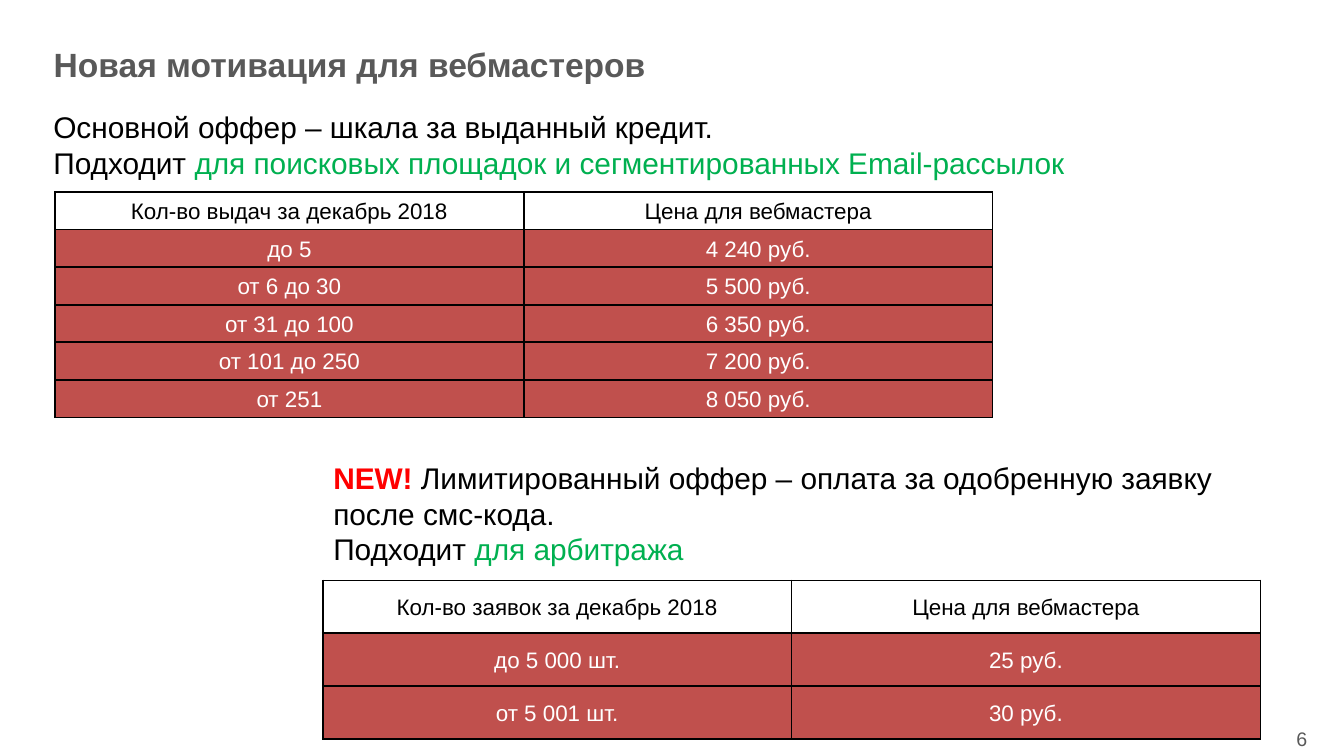
from lxml import etree
from pptx import Presentation
from pptx.dml.color import RGBColor
from pptx.enum.text import MSO_ANCHOR, PP_ALIGN
from pptx.oxml.ns import qn
from pptx.util import Cm, Pt

MIDDLE = MSO_ANCHOR.MIDDLE
CENTER = PP_ALIGN.CENTER
LEFT = PP_ALIGN.LEFT
TITLE_ONLY = 5
FONT = "Arial"
BLACK = "000000"
WHITE = "FFFFFF"
GRAY = "595959"
GREEN = "00B050"
RED = "FF0000"
BRICK = "C0504D"
COLUMN_WIDTH = 8.86

ISSUED_LOANS = [
    ("Кол-во выдач за декабрь 2018", "Цена для вебмастера"),
    ("до 5", "4 240 руб."),
    ("от 6 до 30", "5 500 руб."),
    ("от 31 до 100", "6 350 руб."),
    ("от 101 до 250", "7 200 руб."),
    ("от 251", "8 050 руб."),
]
APPROVED_REQUESTS = [
    ("Кол-во заявок за декабрь 2018", "Цена для вебмастера"),
    ("до 5 000 шт.", "25 руб."),
    ("от 5 001 шт.", "30 руб."),
]
MAIN_OFFER = [
    [("Основной оффер – шкала за выданный кредит.", BLACK, False)],
    [("Подходит ", BLACK, False),
     ("для поисковых площадок и сегментированных Email-рассылок", GREEN, False)],
]
LIMITED_OFFER = [
    [("NEW! ", RED, True),
     ("Лимитированный оффер – оплата за одобренную заявку после смс-кода.",
      BLACK, False)],
    [("Подходит ", BLACK, False), ("для арбитража", GREEN, False)],
]


def color(value):
    return RGBColor.from_string(value)


def format_font(font, size, value, bold=False):
    font.name = FONT
    font.size = Pt(size)
    font.bold = bold
    font.color.rgb = color(value)


def place(shape, left, top, width, height):
    shape.left, shape.top = Cm(left), Cm(top)
    shape.width, shape.height = Cm(width), Cm(height)


def set_title(slide, text):
    title = slide.shapes.title
    place(title, 0.76, 0.71, 21.29, 0.99)
    title.text_frame.text = text
    title.text_frame.vertical_anchor = MIDDLE
    paragraph = title.text_frame.paragraphs[0]
    paragraph.alignment = LEFT
    format_font(paragraph.runs[0].font, 18, GRAY, True)


def add_text(slide, box, lines, size, alignment=LEFT):
    shape = slide.shapes.add_textbox(*map(Cm, box))
    frame = shape.text_frame
    frame.word_wrap = True
    for index, line in enumerate(lines):
        paragraph = frame.add_paragraph() if index else frame.paragraphs[0]
        paragraph.alignment = alignment
        for text, value, bold in line:
            run = paragraph.add_run()
            run.text = text
            format_font(run.font, size, value, bold)


def add_borders(cell):
    properties = cell._tc.get_or_add_tcPr()
    for index, side in enumerate(("a:lnL", "a:lnR", "a:lnT", "a:lnB")):
        line = etree.Element(qn(side), w=str(Pt(1)))
        fill = etree.SubElement(line, qn("a:solidFill"))
        etree.SubElement(fill, qn("a:srgbClr"), val=BLACK)
        properties.insert(index, line)


def format_cell(cell, text, text_color, fill_color):
    cell.margin_left = cell.margin_right = cell.margin_top = Cm(0.03)
    cell.margin_bottom = 0
    cell.vertical_anchor = MIDDLE
    cell.fill.solid()
    cell.fill.fore_color.rgb = color(fill_color)
    cell.text_frame.text = text
    paragraph = cell.text_frame.paragraphs[0]
    paragraph.alignment = CENTER
    format_font(paragraph.runs[0].font, 12, text_color)
    add_borders(cell)


def add_price_table(slide, left, top, row_height, rows):
    columns = len(rows[0])
    table = slide.shapes.add_table(
        len(rows), columns, Cm(left), Cm(top),
        Cm(COLUMN_WIDTH * columns), Cm(row_height * len(rows))).table
    for column in table.columns:
        column.width = Cm(COLUMN_WIDTH)
    for row_index, values in enumerate(rows):
        table.rows[row_index].height = Cm(row_height)
        text_color, fill_color = (WHITE, BRICK) if row_index else (BLACK, WHITE)
        for column_index, text in enumerate(values):
            format_cell(table.cell(row_index, column_index), text,
                        text_color, fill_color)


def main():
    presentation = Presentation()
    presentation.slide_width = Cm(25.4)
    presentation.slide_height = Cm(14.29)
    slide = presentation.slides.add_slide(presentation.slide_layouts[TITLE_ONLY])
    set_title(slide, "Новая мотивация для вебмастеров")
    add_text(slide, (23.93, 13.61, 1.35, 0.71), [[("6", GRAY, False)]], 10.5, CENTER)
    add_price_table(slide, 1.04, 3.63, 0.71, ISSUED_LOANS)
    add_price_table(slide, 6.1, 10.97, 1, APPROVED_REQUESTS)
    add_text(slide, (0.76, 1.93, 20.09, 1.62), MAIN_OFFER, 16)
    add_text(slide, (6.05, 8.56, 18.24, 2.31), LIMITED_OFFER, 16)
    presentation.save("out.pptx")


if __name__ == "__main__":
    main()
